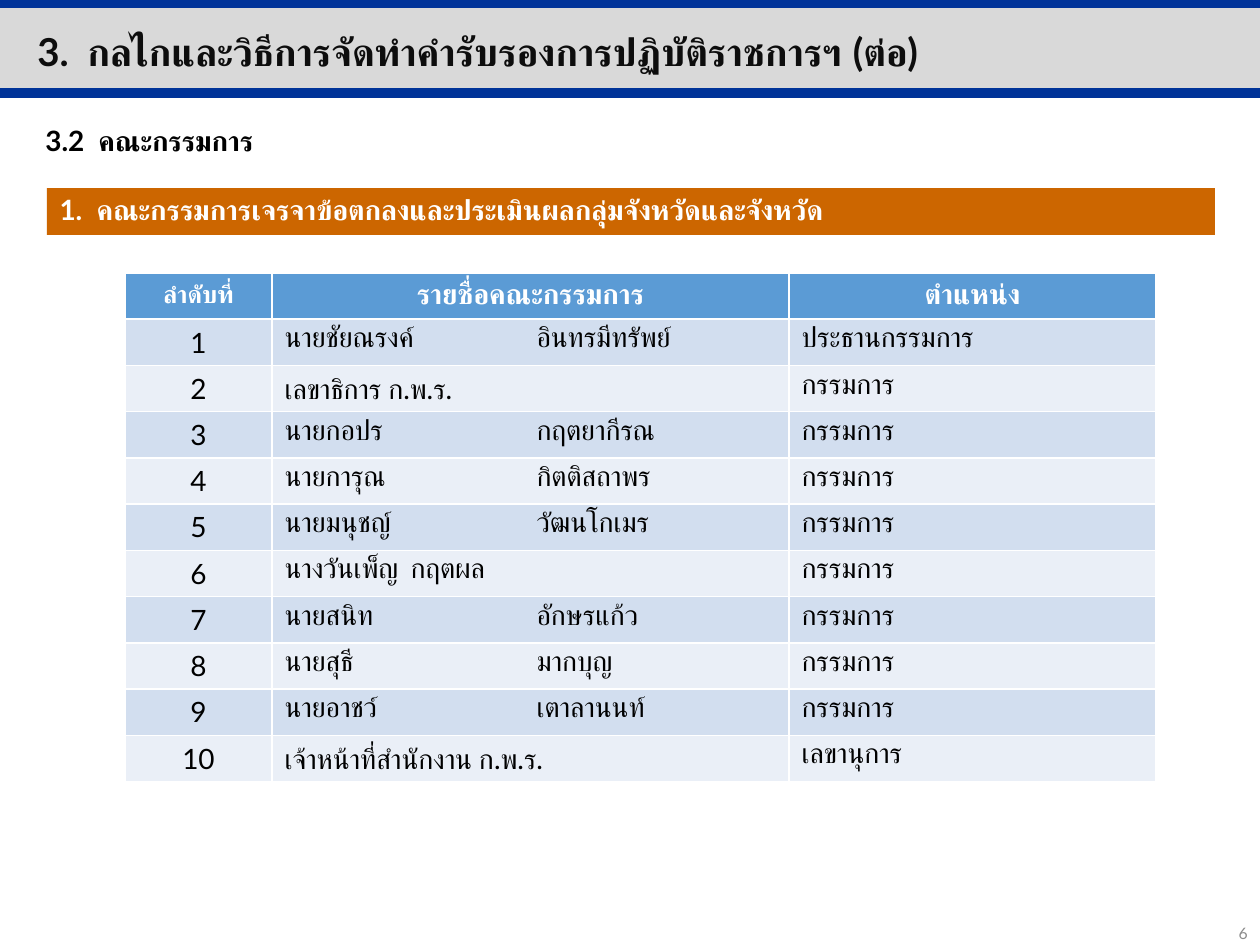
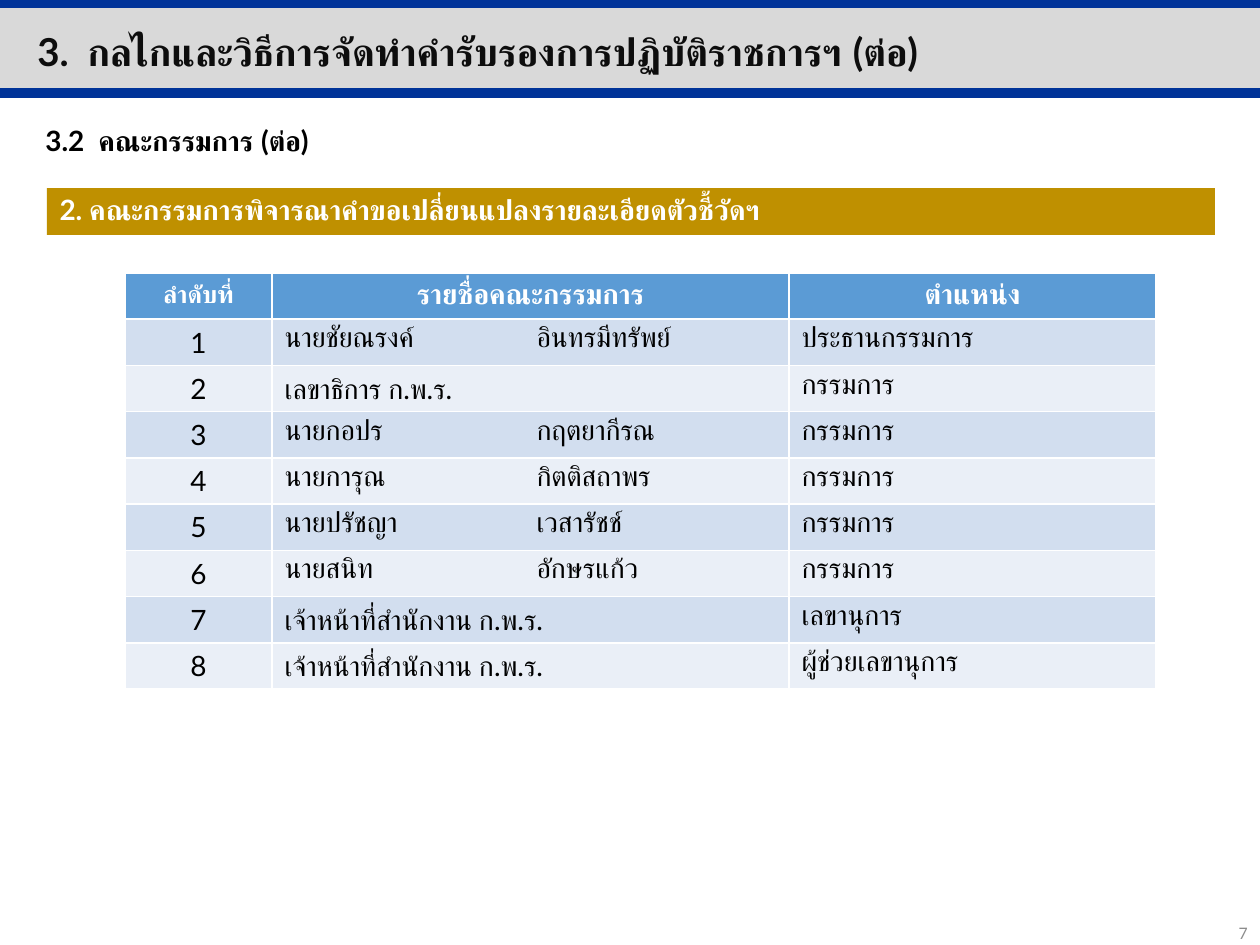
from dataclasses import dataclass
from typing import Optional

from lxml.etree import SubElement
from pptx import Presentation
from pptx.dml.color import RGBColor
from pptx.enum.shapes import MSO_CONNECTOR, MSO_SHAPE
from pptx.enum.text import MSO_ANCHOR, MSO_AUTO_SIZE, PP_ALIGN
from pptx.oxml.ns import qn
from pptx.util import Emu, Pt

PX_PER_INCH = 126
SLIDE_WIDTH, SLIDE_HEIGHT = 1260, 945

FONT = "Lato"
WHITE, BLACK, INK = "FFFFFF", "000000", "0D0D0D"
BAND_GREY, RULE_BLUE, NUMBER_GREY = "D9D9D9", "003399", "8C8C8C"
HEADER_BLUE = "5B9BD5"
ROW_FILLS = ("D2DEEF", "EAEFF7")

HEADING = "3.\tกลไกและวิธีการจัดทำคำรับรองการปฏิบัติราชการฯ (ต่อ)"
COLUMN_WIDTHS = (147, 517, 367)
ROW_HEIGHT = 46
SURNAME_TAB = 252


@dataclass(frozen=True)
class Style:
    size: int
    color: str
    bold: bool = False
    align: PP_ALIGN = PP_ALIGN.LEFT
    tab: Optional[int] = None


@dataclass(frozen=True)
class Box:
    left: int
    top: int
    width: int
    height: int

    def emu(self) -> tuple:
        return tuple(px(n) for n in (self.left, self.top, self.width, self.height))


@dataclass(frozen=True)
class Member:
    name: str
    role: str = "กรรมการ"
    tab: int = SURNAME_TAB


@dataclass(frozen=True)
class Committee:
    section: str
    title: str
    color: str
    page: int
    members: tuple


COLUMN_HEADS = (("ลำดับที่", 14), ("รายชื่อคณะกรรมการ", 16), ("ตำแหน่ง", 16))

CHAIR = Member("นายชัยณรงค์\tอินทรมีทรัพย์", "ประธานกรรมการ")
SECRETARY_GENERAL = Member("เลขาธิการ ก.พ.ร.")
KOPR = Member("นายกอปร\tกฤตยากีรณ")
KARUN = Member("นายการุณ\tกิตติสถาพร")
SANIT = Member("นายสนิท\tอักษรแก้ว")
OFFICER = "เจ้าหน้าที่สำนักงาน ก.พ.ร."
SECRETARY = Member(OFFICER, "เลขานุการ")
SHARED_MEMBERS = (CHAIR, SECRETARY_GENERAL, KOPR, KARUN)

COMMITTEES = (
    Committee(
        "3.2\tคณะกรรมการ",
        "1.\tคณะกรรมการเจรจาข้อตกลงและประเมินผลกลุ่มจังหวัดและจังหวัด",
        "CC6600", 6,
        SHARED_MEMBERS + (
            Member("นายมนุชญ์\tวัฒนโกเมร"),
            Member("นางวันเพ็ญ\tกฤตผล", tab=126),
            SANIT,
            Member("นายสุธี\tมากบุญ"),
            Member("นายอาชว์\tเตาลานนท์"),
            SECRETARY,
        ),
    ),
    Committee(
        "3.2\tคณะกรรมการ (ต่อ)",
        "2. คณะกรรมการพิจารณาคำขอเปลี่ยนแปลงรายละเอียดตัวชี้วัดฯ",
        "BF9000", 7,
        SHARED_MEMBERS + (
            Member("นายปรัชญา\tเวสารัชช์"),
            SANIT,
            SECRETARY,
            Member(OFFICER, "ผู้ช่วยเลขานุการ"),
        ),
    ),
)


def px(length: int) -> Emu:
    return Emu(round(length * 914400 / PX_PER_INCH))


def rgb(color: str) -> RGBColor:
    return RGBColor.from_string(color)


def paint(target, color: str) -> None:
    target.fill.solid()
    target.fill.fore_color.rgb = rgb(color)


def write(frame, text: str, style: Style) -> None:
    paragraph = frame.paragraphs[0]
    paragraph.alignment = style.align
    if style.tab and "\t" in text:
        tabs = SubElement(paragraph._p.get_or_add_pPr(), qn("a:tabLst"))
        SubElement(tabs, qn("a:tab"), pos=str(px(style.tab)), algn="l")
    run = paragraph.add_run()
    run.text = text
    run.font.name = FONT
    run.font.size = Pt(style.size)
    run.font.bold = style.bold
    run.font.color.rgb = rgb(style.color)


def add_label(slide, box: Box, text: str, style: Style,
              anchor: MSO_ANCHOR = MSO_ANCHOR.MIDDLE) -> None:
    frame = slide.shapes.add_textbox(*box.emu()).text_frame
    frame.word_wrap = True
    frame.vertical_anchor = anchor
    write(frame, text, style)


def add_rule(slide, y: int) -> None:
    rule = slide.shapes.add_connector(
        MSO_CONNECTOR.STRAIGHT, px(0), px(y), px(SLIDE_WIDTH), px(y))
    rule.line.color.rgb = rgb(RULE_BLUE)
    rule.line.width = Pt(6)
    SubElement(rule._element.spPr, qn("a:effectLst"))


def add_frame(slide, page: int) -> None:
    """Draw the heading band, its rules and the page number."""
    band = slide.shapes.add_shape(
        MSO_SHAPE.RECTANGLE, *Box(0, 6, SLIDE_WIDTH, 86).emu())
    band.shadow.inherit = False
    paint(band, BAND_GREY)
    band.line.fill.background()
    for y in (93, 3):
        add_rule(slide, y)
    add_label(slide, Box(25, 26, 1191, 50), HEADING, Style(22, INK, True, tab=50))
    add_label(slide, Box(977, 908, 283, 50), str(page),
              Style(9, NUMBER_GREY, align=PP_ALIGN.RIGHT))


def format_title(title, committee: Committee) -> None:
    title.left, title.top, title.width, title.height = Box(47, 188, 1168, 47).emu()
    paint(title, committee.color)
    frame = title.text_frame
    frame.auto_size = MSO_AUTO_SIZE.NONE
    frame.vertical_anchor = MSO_ANCHOR.MIDDLE
    frame.paragraphs[0].line_spacing = 0.9
    write(frame, committee.title, Style(16, WHITE, True, tab=37))


def fill_cell(cell, text: str, color: str, style: Style) -> None:
    paint(cell, color)
    write(cell.text_frame, text, style)


def add_member_table(slide, members: tuple) -> None:
    row_count = len(members) + 1
    box = Box(125, 273, sum(COLUMN_WIDTHS), row_count * ROW_HEIGHT)
    table = slide.shapes.add_table(row_count, len(COLUMN_WIDTHS), *box.emu()).table
    for column, width in zip(table.columns, COLUMN_WIDTHS):
        column.width = px(width)
    for row in table.rows:
        row.height = px(ROW_HEIGHT)

    for column, (head, size) in enumerate(COLUMN_HEADS):
        cell = table.cell(0, column)
        cell.vertical_anchor = MSO_ANCHOR.MIDDLE
        fill_cell(cell, head, HEADER_BLUE, Style(size, WHITE, True, PP_ALIGN.CENTER))

    for order, member in enumerate(members, start=1):
        color = ROW_FILLS[(order - 1) % 2]
        entries = (
            (str(order), Style(16, BLACK, align=PP_ALIGN.CENTER)),
            (member.name, Style(16, BLACK, tab=member.tab)),
            (member.role, Style(16, BLACK)),
        )
        for column, (text, style) in enumerate(entries):
            fill_cell(table.cell(order, column), text, color, style)


def main() -> None:
    deck = Presentation()
    deck.slide_width, deck.slide_height = px(SLIDE_WIDTH), px(SLIDE_HEIGHT)
    title_only = deck.slide_layouts[5]
    for committee in COMMITTEES:
        slide = deck.slides.add_slide(title_only)
        add_frame(slide, committee.page)
        format_title(slide.shapes.title, committee)
        add_label(slide, Box(33, 117, 347, 47), committee.section,
                  Style(16, BLACK, True, tab=53), MSO_ANCHOR.TOP)
        add_member_table(slide, committee.members)
    deck.save("out.pptx")


if __name__ == "__main__":
    main()
